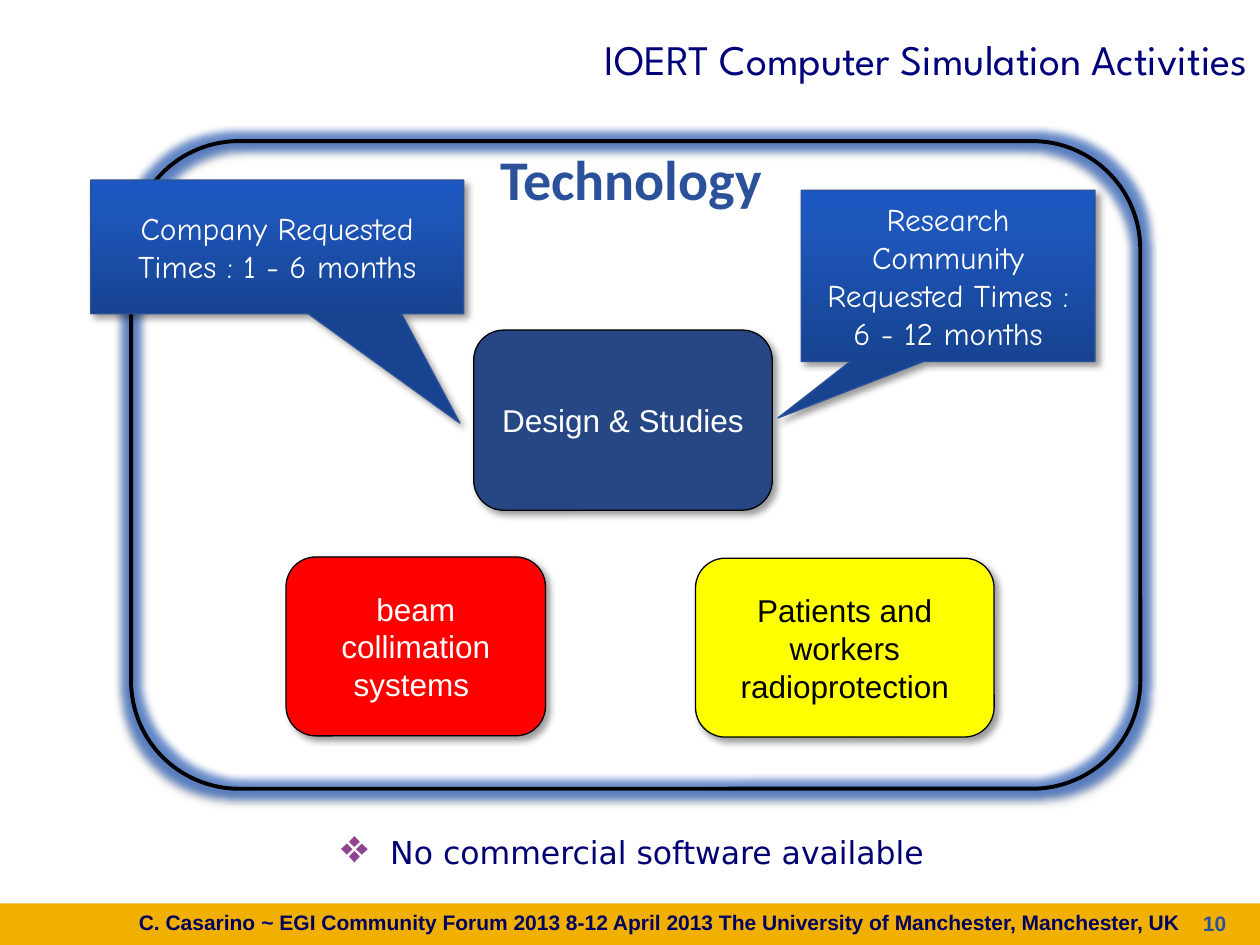
from pptx import Presentation
from pptx.dml.color import RGBColor as Rgb
from pptx.enum.shapes import MSO_SHAPE as Kind
from pptx.enum.text import MSO_ANCHOR as Anchor, PP_ALIGN as Align
from pptx.oxml import parse_xml
from pptx.oxml.ns import nsdecls, qn
from pptx.util import Pt

PX = 9144
HUE = {
    "gold": "F1AF00", "blue": "2B519A", "navy": "00007A", "ink": "000060",
    "note": "000074", "red": "FF0000", "deep": "264783", "yellow": "FFFF00",
    "black": "000000", "white": "FFFFFF", "plum": "904490", "glow": "1B57C0",
    "low": "174391", "mid": "1E57BC", "top": "1B57C0",
}


def rgb(name):
    return Rgb.from_string(HUE[name])


def emu(box):
    return [n * PX for n in box]


def xml(tag, body):
    return parse_xml(f"<a:{tag} {nsdecls('a')}{body}")


def tint(name, alpha):
    return f'<a:srgbClr val="{HUE[name]}"><a:alpha val="{alpha * 1000}"/></a:srgbClr>'


def write(shape, text, size, font, hue, align, bold=False, anchor=Anchor.TOP):
    frame = shape.text_frame
    frame.word_wrap = True
    frame.vertical_anchor = anchor
    para = frame.paragraphs[0]
    para.alignment = align
    para.font.size = Pt(size)
    para.font.name = font
    para.font.bold = bold
    para.font.color.rgb = rgb(hue)
    para.add_run().text = text
    return para


def label(slide, box, *args, **opts):
    return write(slide.shapes.add_textbox(*emu(box)), *args, **opts)


def shade(shape, alpha, blur, dist, angle):
    shape.shadow.inherit = False
    effects = shape._element.spPr.find(qn("a:effectLst"))
    effects.append(xml("outerShdw", (
        f' blurRad="{Pt(blur)}" dist="{Pt(dist)}" dir="{angle * 60000}" rotWithShape="0">'
        f'{tint("black", alpha)}</a:outerShdw>')))
    return effects


def outline(shape, hue, width):
    shape.line.color.rgb = rgb(hue)
    shape.line.width = Pt(width)


def node(slide, box, text, fill, hue):
    shape = slide.shapes.add_shape(Kind.ROUNDED_RECTANGLE, *emu(box))
    shape.fill.solid()
    shape.fill.fore_color.rgb = rgb(fill)
    outline(shape, "black", 0.75)
    shade(shape, 40, 4, 3, 45)
    write(shape, text, 18, "Arial", hue, Align.CENTER, anchor=Anchor.MIDDLE)


def callout(slide, box, text, tip):
    shape = slide.shapes.add_shape(Kind.RECTANGULAR_CALLOUT, *emu(box))
    for at, part in enumerate(tip):
        shape.adjustments[at] = part
    stops = "".join(
        f'<a:gs pos="{at * 1000}">{tint(name, 100)}</a:gs>'
        for at, name in ((0, "low"), (80, "mid"), (100, "top")))
    shape._element.spPr.find(qn("a:prstGeom")).addnext(xml("gradFill", (
        f' rotWithShape="1"><a:gsLst>{stops}</a:gsLst>'
        '<a:lin ang="16200000" scaled="0"/></a:gradFill>')))
    outline(shape, "blue", 0.75)
    shade(shape, 40, 4, 3, 45)
    write(shape, text, 18, "Comic Neue", "white", Align.CENTER, anchor=Anchor.MIDDLE)


def panel(slide, box):
    left, top, wide, high = box
    for x, y, w, h, text, fill, hue in (
        (123, 330, 206, 142, "beam collimation systems ", "red", "white"),
        (272, 150, 237, 143, "Design & Studies", "deep", "white"),
        (448, 331, 237, 142, "Patients and workers radioprotection", "yellow", "black"),
    ):
        node(slide, (left + x, top + y, w, h), text, fill, hue)
    edge = slide.shapes.add_shape(Kind.ROUNDED_RECTANGLE, *emu(box))
    edge.fill.background()
    outline(edge, "black", 2.25)
    effects = shade(edge, 35, 3.1, 1.8, 90)
    effects.insert(0, xml("glow", f' rad="{Pt(8)}">{tint("glow", 60)}</a:glow>'))
    label(slide, (left + 132, top - 2, 530, 118), "Technology", 32, "Calibri",
          "blue", Align.CENTER, bold=True)
    for x, y, w, h, text, tip in (
        (-32, 31, 296, 106, "Company Requested Times : 1 - 6 months", (0.49, 1.32)),
        (532, 39, 233, 136, "Research Community Requested Times : 6 - 12 months", (-0.58, 0.83)),
    ):
        callout(slide, (left + x, top + y, w, h), text, tip)


def note(slide, box):
    shape = slide.shapes.add_textbox(*emu(box))
    para = shape.text_frame.paragraphs[0]
    props = para._p.get_or_add_pPr()
    props.set("marL", str(31 * PX))
    props.set("indent", str(-31 * PX))
    props.append(xml("buClr", f'>{tint("plum", 100)}</a:buClr>'))
    props.append(xml("buSzPct", ' val="150000"/>'))
    props.append(xml("buChar", ' char="❖"/>'))
    para.line_spacing = 1.1
    write(shape, " No commercial software available", 18, "DejaVu Sans",
          "note", Align.JUSTIFY)


def footer(slide, box):
    left, top, wide, high = box
    bar = slide.shapes.add_shape(Kind.RECTANGLE, *emu(box))
    bar.fill.solid()
    bar.fill.fore_color.rgb = rgb("gold")
    bar.line.fill.background()
    bar.shadow.inherit = False
    label(slide, (left + 932, top + 1, 51, 52), "10", 12, "Arial", "blue",
          Align.RIGHT, bold=True)
    para = label(slide, (left + 50, top, 897, 52), "C. Casarino ", 12, "Arial",
                 "ink", Align.RIGHT, bold=True)
    mark = para.add_run()
    mark.text = "~ "
    mark.font.color.rgb = rgb("navy")
    para.add_run().text = (
        "EGI Community Forum 2013 8-12 April 2013 "
        "The University of Manchester, Manchester, UK")


def main():
    deck = Presentation()
    deck.slide_width, deck.slide_height = emu((1000, 750))
    slide = deck.slides.add_slide(deck.slide_layouts[6])
    footer(slide, (0, 717, 1000, 33))
    label(slide, (125, 9, 875, 75), "IOERT Computer Simulation Activities", 24,
          "League Spartan", "navy", Align.RIGHT, anchor=Anchor.MIDDLE)
    panel(slide, (104, 112, 801, 514))
    note(slide, (261, 653, 496, 43))
    deck.save("out.pptx")


if __name__ == "__main__":
    main()
